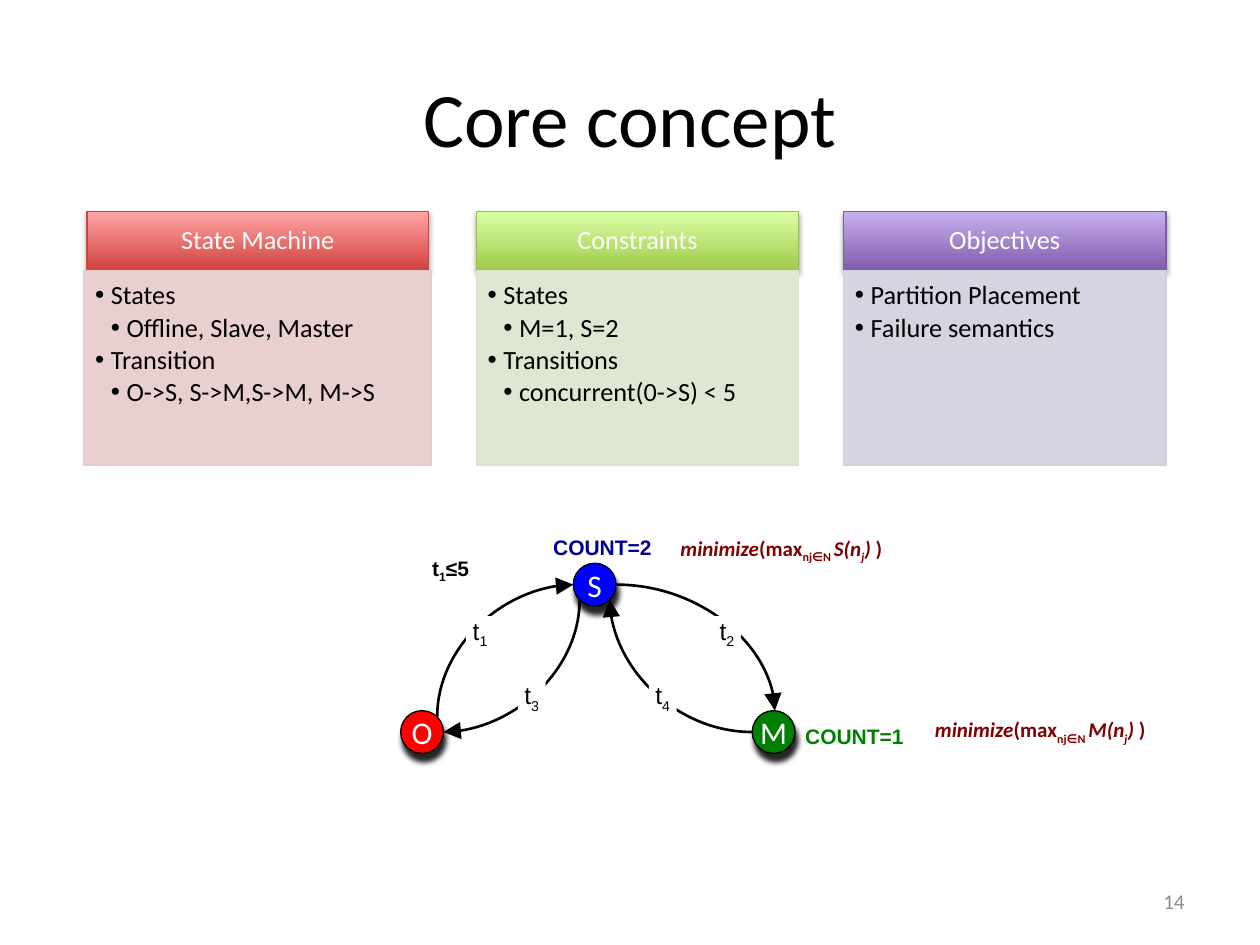
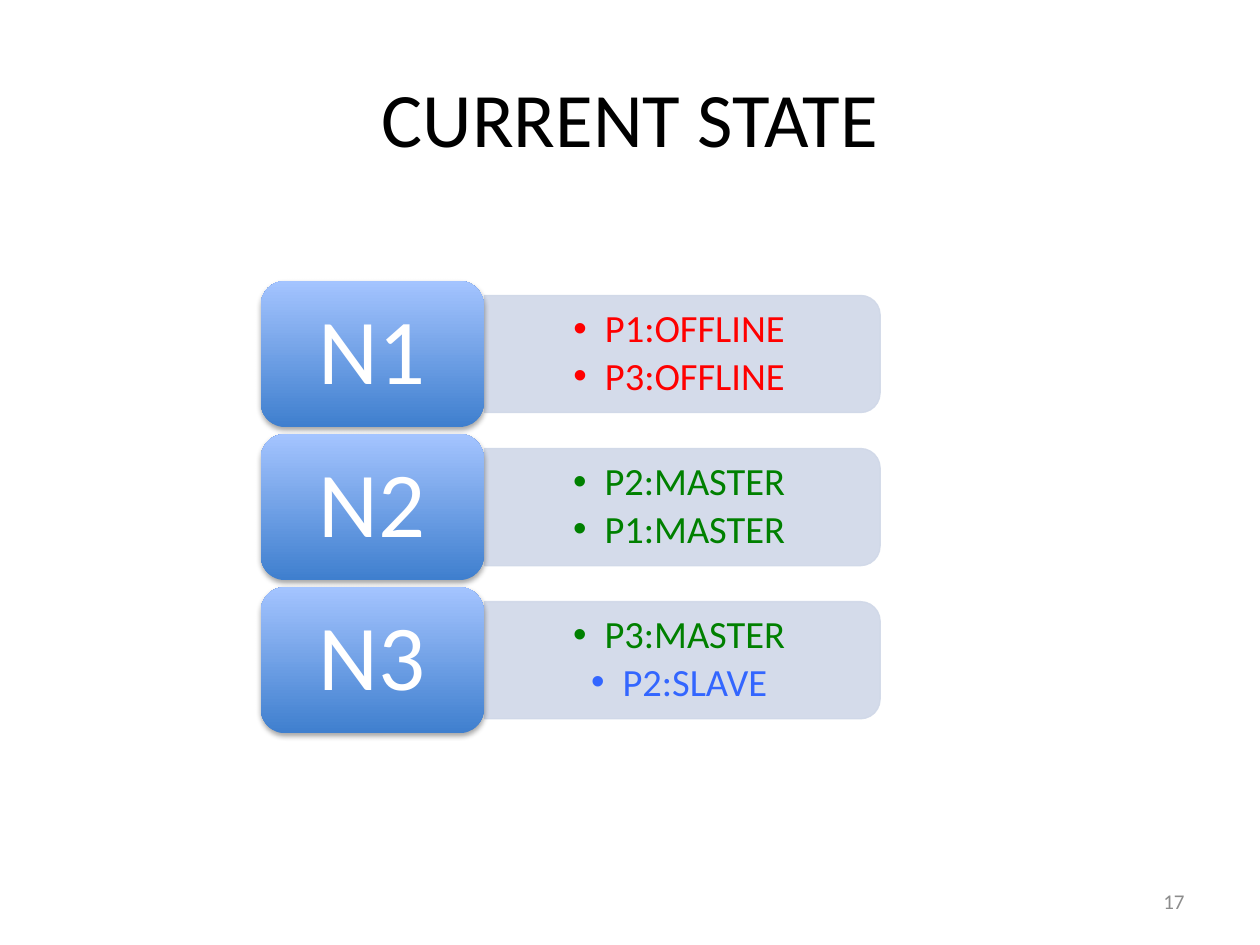
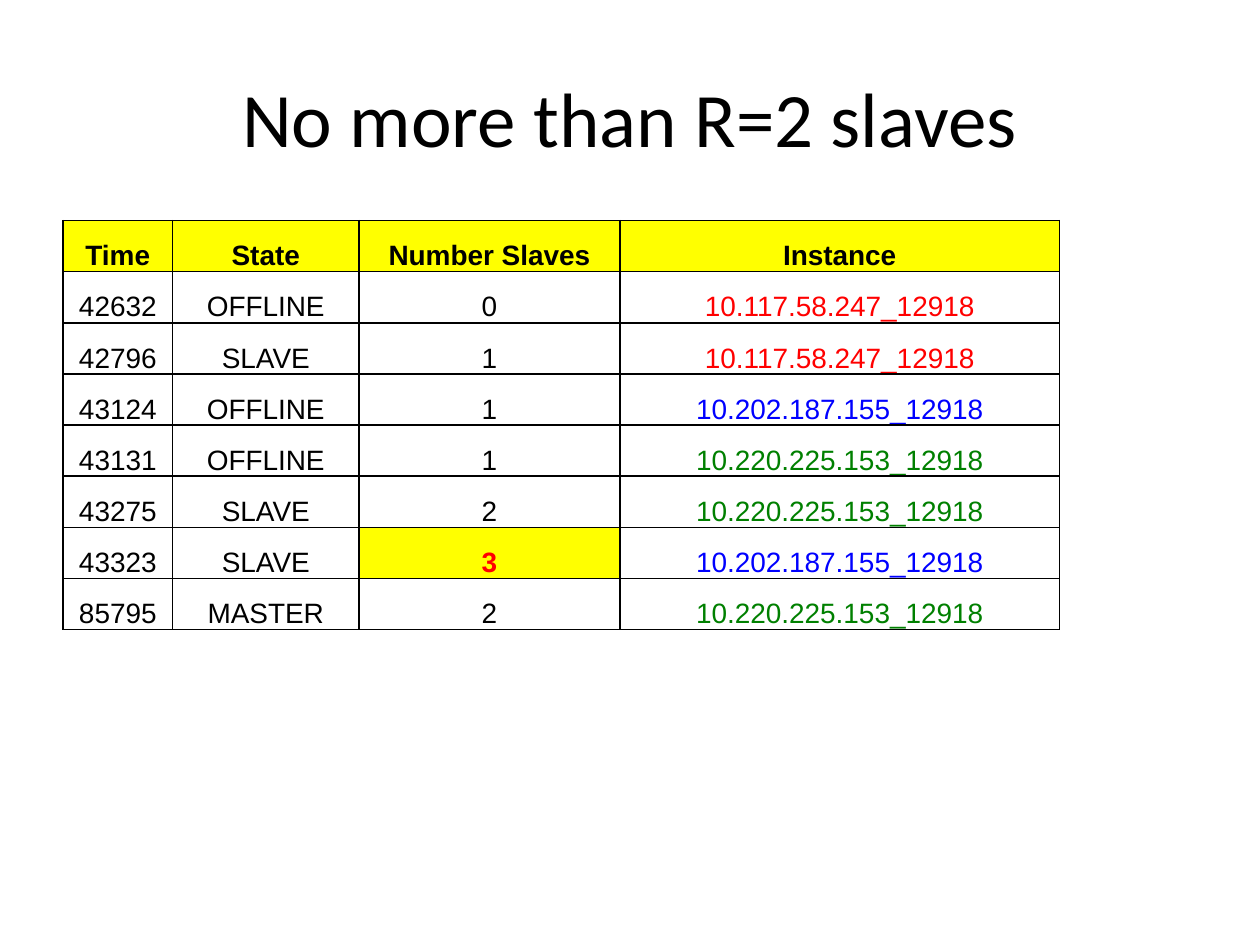
from lxml import etree
from pptx import Presentation
from pptx import util as u
from pptx.dml import color
from pptx.enum import shapes, text
from pptx.oxml import ns

UNIT = u.Inches(0.1)  # the slide is a grid of 100 columns by 75 rows
TITLE_ONLY = 5
BLACK, WHITE, GREY = "000000", "FFFFFF", "8C8C8C"
RED, GREEN, BLUE, YELLOW = "FF0000", "008000", "0000FF", "FFFF00"
SKY, NAVY, MAROON = "3366FF", "000090", "800000"
SOFT_SHADOW = dict(alpha=35, blur=3.1, distance=1.8, angle=90)
DEEP_SHADOW = dict(alpha=86, blur=3.1, distance=5, angle=75)
PRESET = shapes.MSO_SHAPE
ALIGN, ANCHOR = text.PP_ALIGN, text.MSO_ANCHOR


def rgb(value):
    return color.RGBColor.from_string(value)


def grid(*lengths):
    return [u.Emu(round(length * UNIT)) for length in lengths]


def add_xml(parent, tag, **attributes):
    values = {name: str(value) for name, value in attributes.items()}
    return etree.SubElement(parent, ns.qn(tag), values)


def format_run(run, size, hex_color, font="Calibri", flags=""):
    """Flags: b for bold, i for italic, _ for subscript."""
    run.font.size, run.font.name = u.Pt(size), font
    run.font.color.rgb = rgb(hex_color)
    run.font.bold, run.font.italic = "b" in flags, "i" in flags
    if "_" in flags:
        run.font._element.set("baseline", "-25000")


def set_frame(frame, anchor=ANCHOR.TOP, insets=(0, 0, 0, 0), wrap=True):
    frame.word_wrap, frame.vertical_anchor = wrap, anchor
    (frame.margin_left, frame.margin_top,
     frame.margin_right, frame.margin_bottom) = grid(*insets)


def write_runs(frame, runs, size, hex_color, font="Calibri", align=ALIGN.CENTER):
    """Fill the first paragraph with (text, flags) runs."""
    paragraph = frame.paragraphs[0]
    paragraph.alignment = align
    for words, flags in runs:
        run = paragraph.add_run()
        run.text = words
        format_run(run, size, hex_color, font, flags)
    return paragraph


def write_bullets(frame, items, size, indent, align=ALIGN.LEFT):
    """Fill the frame with (text, level, colour) items."""
    frame.text = "\n".join(words for words, _, _ in items)
    for paragraph, (_, level, hex_color) in zip(frame.paragraphs, items):
        paragraph.alignment, paragraph.line_spacing = align, 0.9
        paragraph.space_after = u.Pt(size * 0.15)
        format_run(paragraph.runs[0], size, hex_color)
        properties = paragraph._p.get_or_add_pPr()
        step = u.Inches(indent)
        properties.set("marL", str(step * level))
        properties.set("indent", str(-step))
        add_xml(properties, "a:buFont", typeface="Arial")
        add_xml(properties, "a:buChar", char="•")


def add_block(slide, preset, box, fill, line=None, shadow=None, alpha=None):
    """Draw a preset shape; a pair of fill colours runs from bottom to top."""
    shape = slide.shapes.add_shape(preset, *grid(*box))
    if isinstance(fill, tuple):
        shape.fill.gradient()
        shape.fill.gradient_angle = 90
        for stop, hex_color in zip(shape.fill.gradient_stops, fill):
            stop.color.rgb = rgb(hex_color)
    else:
        shape.fill.solid()
        shape.fill.fore_color.rgb = rgb(fill)
    if line:
        shape.line.color.rgb, shape.line.width = rgb(line), u.Pt(0.75)
    else:
        shape.line.fill.background()
    properties = shape._element.spPr
    if alpha:
        for tint in properties.iter(ns.qn("a:srgbClr")):
            add_xml(tint, "a:alpha", val=alpha * 1000)
    shape.shadow.inherit = False
    if shadow:
        outer = add_xml(properties.find(ns.qn("a:effectLst")), "a:outerShdw",
                        blurRad=u.Pt(shadow["blur"]), dist=u.Pt(shadow["distance"]),
                        dir=shadow["angle"] * 60000, rotWithShape=0)
        tint = add_xml(outer, "a:srgbClr", val=BLACK)
        add_xml(tint, "a:alpha", val=shadow["alpha"] * 1000)
    return shape


def add_text(slide, box, runs, size, hex_color, font="Calibri",
             align=ALIGN.LEFT, anchor=ANCHOR.TOP, insets=(0, 0.5, 1, 0.5), wrap=False):
    frame = slide.shapes.add_textbox(*grid(*box)).text_frame
    set_frame(frame, anchor, insets, wrap)
    return write_runs(frame, runs, size, hex_color, font, align)


def add_note(slide, left, top, width, runs, hex_color, font="Arial"):
    paragraph = add_text(slide, (left, top, width, 3.8), runs, 12, hex_color, font)
    paragraph.space_before = u.Pt(2.4)


def add_titled_slide(presentation, title, number=None):
    slide = presentation.slides.add_slide(presentation.slide_layouts[TITLE_ONLY])
    placeholder = slide.shapes.title
    placeholder.left, placeholder.top, placeholder.width, placeholder.height = grid(5, 3, 90, 12.5)
    placeholder.text_frame.text = title
    placeholder.text_frame.vertical_anchor = ANCHOR.MIDDLE
    placeholder.text_frame.paragraphs[0].alignment = ALIGN.CENTER
    format_run(placeholder.text_frame.paragraphs[0].runs[0], 44, BLACK)
    if number:
        add_text(slide, (71.7, 69.5, 23.3, 4), [(number, "")], 12, GREY,
                 align=ALIGN.RIGHT, anchor=ANCHOR.MIDDLE, insets=(1, 0.5, 1, 0.5), wrap=True)
    return slide


def add_panel(slide, left, width, overhang, heading, gradient, edge, body, body_edge, items):
    """A heading bar over a list; the list is wider by overhang on each side."""
    header = add_block(slide, PRESET.RECTANGLE, (left, 16.8, width, 4.7),
                       gradient, edge, SOFT_SHADOW)
    set_frame(header.text_frame, ANCHOR.MIDDLE, (1.2, 0.7, 1.2, 0.7))
    write_runs(header.text_frame, [(heading, "")], 15, WHITE).line_spacing = 0.9
    panel = add_block(slide, PRESET.RECTANGLE,
                      (left - overhang, 21.5, width + 2 * overhang, 15.4),
                      body, body_edge)
    set_frame(panel.text_frame, insets=(0.9, 0.9, 1.2, 1.3))
    write_bullets(panel.text_frame, [(words, level, BLACK) for words, level in items], 15, 0.125)


def add_state(slide, name, center_x, center_y, fill):
    radius = 1.7
    node = add_block(slide, PRESET.OVAL,
                     (center_x - radius, center_y - radius, 2 * radius, 2 * radius),
                     fill, BLACK, DEEP_SHADOW)
    set_frame(node.text_frame, ANCHOR.MIDDLE, wrap=False)
    write_runs(node.text_frame, [(name, "")], 18, WHITE)


def add_arc(slide, begin, end, arrow):
    """A quarter curve that leaves begin level and reaches end upright."""
    connector = slide.shapes.add_connector(shapes.MSO_CONNECTOR.CURVE, *grid(*begin, *end))
    connector.line.color.rgb, connector.line.width = rgb(BLACK), u.Pt(1.5)
    properties = connector._element.spPr
    properties.find(ns.qn("a:prstGeom")).set("prst", "curvedConnector2")
    add_xml(properties.find(ns.qn("a:ln")), arrow, type="triangle", w="lg", len="lg")
    add_xml(properties, "a:effectLst")


def add_transition_label(slide, number, left, top):
    label = add_block(slide, PRESET.RECTANGLE, (left, top, 2.2, 2.9), WHITE)
    set_frame(label.text_frame, wrap=False)
    write_runs(label.text_frame, [("t", ""), (number, "_")], 14, BLACK, "Arial")


def add_objective(slide, left, top, state):
    runs = [("minimize", "bi"), ("(max", "b"), ("nj∈N ", "b_"), (f"{state}(n", "bi"),
            ("j", "bi_"), (")", "bi"), (" )", "b")]
    add_note(slide, left, top, 20.2, runs, MAROON, "Calibri")


def add_node_row(slide, top, name, partitions):
    bar = add_block(slide, PRESET.ROUND_2_SAME_RECTANGLE, (49.5, top - 9.9, 9.3, 31.4),
                    "D0D8E8", "D0D8E8", alpha=90)
    bar.rotation = 90
    frame = slide.shapes.add_textbox(*grid(38.4, top + 1.6, 31, 8.4)).text_frame
    set_frame(frame, ANCHOR.MIDDLE, (0.9, 0.5, 0.9, 0.5))
    write_bullets(frame, [(words, 1, tint) for words, tint in partitions], 22, 0.25, ALIGN.CENTER)
    tile = add_block(slide, PRESET.ROUNDED_RECTANGLE, (20.7, top, 17.7, 11.6),
                     ("3F7FCE", "A4C4FF"), shadow=SOFT_SHADOW)
    set_frame(tile.text_frame, ANCHOR.MIDDLE, (2.2, 1.1, 2.2, 1.1))
    write_runs(tile.text_frame, [(name, "")], 53, WHITE).line_spacing = 0.9


def format_cell(cell, words, hex_color=BLACK, bold=False, fill=None):
    cell.text = words
    cell.vertical_anchor = ANCHOR.BOTTOM
    cell.margin_left = cell.margin_top = cell.margin_right = u.Inches(0.01)
    cell.margin_bottom = 0
    paragraph = cell.text_frame.paragraphs[0]
    paragraph.alignment = ALIGN.CENTER
    format_run(paragraph.runs[0], 16, hex_color, "Arial", "b" if bold else "")
    properties = cell._tc.get_or_add_tcPr()
    for side in ("a:lnL", "a:lnR", "a:lnT", "a:lnB"):
        border = add_xml(properties, side, w=u.Pt(1))
        add_xml(add_xml(border, "a:solidFill"), "a:srgbClr", val=BLACK)
    if fill:
        cell.fill.solid()
        cell.fill.fore_color.rgb = rgb(fill)
    else:
        cell.fill.background()


def add_log_table(slide, left, top, widths, row_height, header, rows, tints, limit):
    """Instances take their tint; slave counts above the limit are highlighted."""
    box = grid(left, top, sum(widths), row_height * (len(rows) + 1))
    table = slide.shapes.add_table(len(rows) + 1, len(widths), *box).table
    table.first_row = table.horz_banding = False
    for column, width in zip(table.columns, grid(*widths)):
        column.width = width
    for column, words in enumerate(header):
        format_cell(table.cell(0, column), words, bold=True, fill=YELLOW)
    for row, (time, state, slaves, instance) in enumerate(rows, 1):
        format_cell(table.cell(row, 0), time)
        format_cell(table.cell(row, 1), state)
        alert = dict(hex_color=RED, bold=True, fill=YELLOW) if slaves > limit else {}
        format_cell(table.cell(row, 2), str(slaves), **alert)
        format_cell(table.cell(row, 3), instance, tints[instance])


def build_core_concept(presentation):
    slide = add_titled_slide(presentation, "Core concept", "14")
    add_note(slide, 43.9, 41.9, 9.5, [("COUNT=2", "b")], NAVY)
    add_note(slide, 63.9, 56.9, 9.5, [("COUNT=1", "b")], GREEN)
    add_note(slide, 34.3, 43.6, 6, [("t", "b"), ("1", "b_"), ("≤5", "b")], BLACK)
    add_objective(slide, 54, 42, "S")
    add_objective(slide, 74.2, 56.4, "M")

    add_state(slide, "S", 47.2, 46.4, BLUE)
    add_state(slide, "M", 61.4, 58.1, GREEN)
    add_state(slide, "O", 33.5, 58.1, RED)
    add_arc(slide, (45.5, 46.4), (34.7, 56.9), "a:headEnd")
    add_arc(slide, (48.9, 46.4), (61.5, 56.4), "a:tailEnd")
    add_arc(slide, (35.2, 58.1), (46, 47.6), "a:headEnd")
    add_arc(slide, (59.7, 58.1), (48.4, 47.6), "a:tailEnd")
    for number, left, top in (("1", 37, 48.9), ("2", 56.6, 48.9),
                              ("3", 41.1, 54), ("4", 51.5, 54)):
        add_transition_label(slide, number, left, top)

    add_panel(slide, 6.9, 27.1, 0.25, "State Machine", ("D1403C", "FFA6A5"), "BF4C48",
              "E8D0D0", "E3CBCB",
              [("States", 1), ("Offline, Slave, Master", 2),
               ("Transition", 1), ("O->S, S->M,S->M, M->S", 2)])
    add_panel(slide, 37.8, 25.6, 0, "Constraints", ("A0CA4A", "DAFFA5"), "98B955",
              "DEE7D1", "D9E2CC",
              [("States", 1), ("M=1, S=2", 2),
               ("Transitions", 1), ("concurrent(0->S) < 5", 2)])
    add_panel(slide, 66.95, 25.6, 0, "Objectives", ("7F5BAB", "C8B0ED"), "7D60A0",
              "D8D3E0", "D3CEDB",
              [("Partition Placement", 1), ("Failure semantics", 1)])


def build_current_state(presentation):
    slide = add_titled_slide(presentation, "CURRENT STATE", "17")
    nodes = (("N1", [("P1:OFFLINE", RED), ("P3:OFFLINE", RED)]),
             ("N2", [("P2:MASTER", GREEN), ("P1:MASTER", GREEN)]),
             ("N3", [("P3:MASTER", GREEN), ("P2:SLAVE", SKY)]))
    for index, (name, partitions) in enumerate(nodes):
        add_node_row(slide, 22.3 + 12.15 * index, name, partitions)


def build_slave_log(presentation):
    slide = add_titled_slide(presentation, "No more than R=2 slaves")
    first, second, third = "10.117.58.247_12918", "10.202.187.155_12918", "10.220.225.153_12918"
    rows = [("42632", "OFFLINE", 0, first),
            ("42796", "SLAVE", 1, first),
            ("43124", "OFFLINE", 1, second),
            ("43131", "OFFLINE", 1, third),
            ("43275", "SLAVE", 2, third),
            ("43323", "SLAVE", 3, second),
            ("85795", "MASTER", 2, third)]
    add_log_table(slide, 5, 17.5, (8.7, 14.8, 20.7, 34.9), 4.06,
                  ("Time", "State", "Number Slaves", "Instance"), rows,
                  {first: RED, second: BLUE, third: GREEN}, limit=2)


def main():
    presentation = Presentation()
    presentation.slide_width, presentation.slide_height = grid(100, 75)
    build_core_concept(presentation)
    build_current_state(presentation)
    build_slave_log(presentation)
    presentation.save("out.pptx")


if __name__ == "__main__":
    main()
